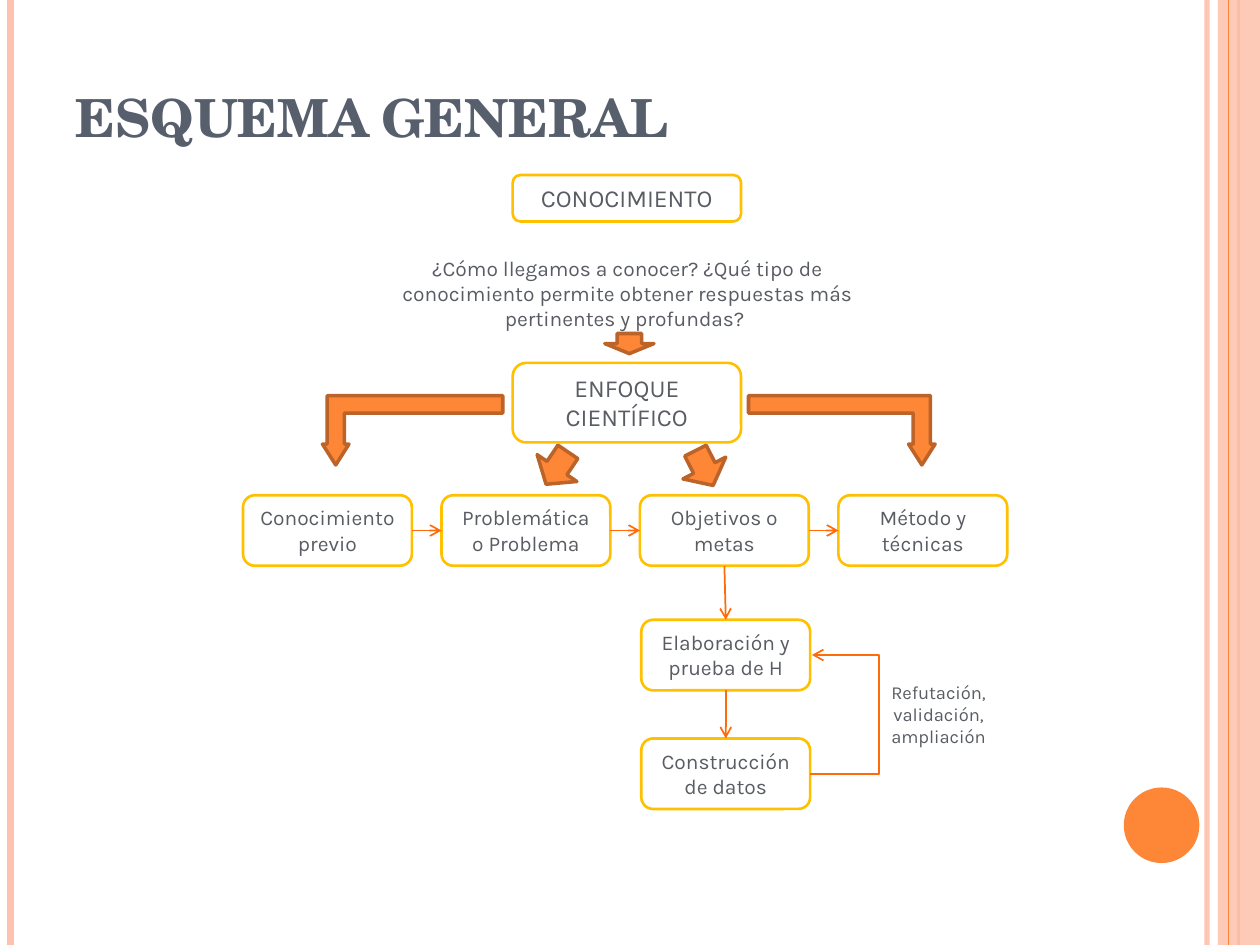
from pptx import Presentation
from pptx.dml.color import RGBColor
from pptx.enum.dml import MSO_LINE
from pptx.enum.shapes import MSO_CONNECTOR, MSO_SHAPE
from pptx.enum.text import MSO_ANCHOR, MSO_AUTO_SIZE, PP_ALIGN
from pptx.oxml.ns import qn
from pptx.util import Pt
from lxml.etree import SubElement

PAGE_WIDTH, PAGE_HEIGHT = 720, 540
ORANGE, DARK_ORANGE, ARROW_ORANGE = "FE8637", "BC6329", "FF6B0A"
PEACH, YELLOW = "FEC3AE", "FFC000"
TITLE_GREY, TEXT_GREY = "575F6D", "595D63"
BOX_WIDTH, BOX_HEIGHT = 96.5, 40.3
ROW_LEFT, ROW_TOP, ROW_STEP = 138.9, 283, 113.4
TOP, LEFT, BOTTOM, RIGHT = range(4)


def paint(color_format, color, alpha=None):
    """Set a hex colour, with an optional opacity in percent."""
    color_format.rgb = RGBColor.from_string(color)
    if alpha is not None:
        # The colour element is reached through the fill that owns it
        SubElement(color_format._xFill[0], qn("a:alpha")).set("val", str(alpha * 1000))


def add_shape(page, kind, left, top, width, height, fill=None, line=None, line_width=1.5, alpha=None):
    shape = page.shapes.add_shape(kind, Pt(left), Pt(top), Pt(width), Pt(height))
    shape.shadow.inherit = False
    if fill:
        shape.fill.solid()
        paint(shape.fill.fore_color, fill, alpha)
    else:
        shape.fill.background()
    if line:
        paint(shape.line.color, line)
        shape.line.width = Pt(line_width)
    else:
        shape.line.fill.background()
    return shape


def add_text_box(page, text, left, top, width=BOX_WIDTH, height=BOX_HEIGHT, size=12, line=YELLOW):
    box = add_shape(page, MSO_SHAPE.ROUNDED_RECTANGLE, left, top, width, height, line=line)
    frame = box.text_frame
    frame.text = text
    frame.word_wrap = True
    frame.auto_size = MSO_AUTO_SIZE.SHAPE_TO_FIT_TEXT
    frame.vertical_anchor = MSO_ANCHOR.TOP
    para = frame.paragraphs[0]
    para.alignment = PP_ALIGN.CENTER
    font = para.runs[0].font
    font.name, font.size = "Karla", Pt(size)
    paint(font.color, TEXT_GREY)
    return box


def add_block_arrow(page, kind, left, top, width, height, rotation=0, flipped=False):
    arrow = add_shape(page, kind, left, top, width, height, ORANGE, DARK_ORANGE, 2)
    arrow.rotation = rotation
    if flipped:
        arrow.element.spPr.find(qn("a:xfrm")).set("flipH", "1")
    return arrow


def add_line(page, start, end, color, width, kind=MSO_CONNECTOR.STRAIGHT, alpha=None):
    line = page.shapes.add_connector(kind, *map(Pt, start + end))
    line.line.width = Pt(width)
    line.line.dash_style = MSO_LINE.SOLID
    line.line.fill.solid()
    paint(line.line.fill.fore_color, color, alpha)
    SubElement(line.element.spPr, qn("a:effectLst"))
    return line


def add_arrowhead(line):
    SubElement(line.line._get_or_add_ln(), qn("a:tailEnd")).set("type", "arrow")


def join(page, first, first_side, second, second_side):
    line = add_line(page, (0, 0), (0, 0), ARROW_ORANGE, 1)
    line.begin_connect(first, first_side)
    line.end_connect(second, second_side)
    add_arrowhead(line)


def add_feedback_arrow(page, start, end, reach):
    """Draw an elbow that runs out by reach before it turns back to end."""
    line = add_line(page, start, end, ARROW_ORANGE, 1, MSO_CONNECTOR.ELBOW)
    guide = SubElement(line.element.spPr.find(qn("a:prstGeom")).get_or_add_avLst(), qn("a:gd"))
    guide.set("name", "adj1")
    guide.set("fmla", f"val {round(reach / (end[0] - start[0]) * 100000)}")
    add_arrowhead(line)


def add_decoration(page):
    def stripe(x, color, width, alpha=None):
        add_line(page, (x, 0), (x, PAGE_HEIGHT), color, width, alpha=alpha)

    stripe(689.8, PEACH, 3, 93)
    stripe(6, PEACH, 4.5)
    stripe(707.8, ORANGE, 1.5)
    add_shape(page, MSO_SHAPE.RECTANGLE, 696, 0, 24, PAGE_HEIGHT, PEACH, alpha=87)
    stripe(702, ORANGE, 0.75)
    add_shape(page, MSO_SHAPE.OVAL, 642.2, 450, 43.2, 43.2, ORANGE)


def set_title(page, text):
    title = page.shapes.title
    title.left, title.top, title.width, title.height = Pt(36), Pt(21.6), Pt(588), Pt(90)
    frame = title.text_frame
    frame.text = text
    frame.auto_size = MSO_AUTO_SIZE.NONE
    frame.vertical_anchor = MSO_ANCHOR.MIDDLE
    para = frame.paragraphs[0]
    para.alignment = PP_ALIGN.LEFT
    font = para.runs[0].font
    font.name, font.size, font.bold = "TeX Gyre Schola", Pt(30), True
    paint(font.color, TITLE_GREY)
    font._element.set("cap", "small")


def add_block_arrows(page):
    add_block_arrow(page, MSO_SHAPE.DOWN_ARROW, 345.6, 190.6, 28.1, 11.5)
    for left, width, flipped in ((184.3, 103, False), (427.7, 106.6, True)):
        arrow = add_block_arrow(page, MSO_SHAPE.BENT_UP_ARROW, left, 226.1, width, 39.6, 180, flipped)
        for index, value in enumerate((0.25, 0.191, 0.301)):
            arrow.adjustments[index] = value
    for left, rotation in ((304.6, 34), (388.8, 333.1)):
        add_block_arrow(page, MSO_SHAPE.DOWN_ARROW, left, 256.3, 27.4, 22.3, rotation)


def main():
    deck = Presentation()
    deck.slide_width, deck.slide_height = Pt(PAGE_WIDTH), Pt(PAGE_HEIGHT)
    page = deck.slides.add_slide(deck.slide_layouts[5])
    add_decoration(page)
    set_title(page, "ESQUEMA GENERAL")

    add_text_box(page, "CONOCIMIENTO", 293, 100, 130.5, 26.6, 14)
    add_text_box(page, "ENFOQUE CIENTÍFICO", 293, 207.4, 130.5, 45.4, 14)
    add_text_box(page, "¿Cómo llegamos a conocer? ¿Qué tipo de conocimiento permite "
                 "obtener respuestas más pertinentes y profundas? ",
                 219.6, 139.7, 277.9, 56.2, line=None)

    stages = ["Conocimiento previo", "Problemática o Problema", "Objetivos o metas", "Método y técnicas"]
    row = [add_text_box(page, text, ROW_LEFT + index * ROW_STEP, ROW_TOP)
           for index, text in enumerate(stages)]
    column_left, test_top, data_top = 366.5, 354.2, 422
    test = add_text_box(page, "Elaboración y prueba de H", column_left, test_top)
    data = add_text_box(page, "Construcción de datos", column_left, data_top)

    add_block_arrows(page)
    for first, second in zip(row, row[1:]):
        join(page, first, RIGHT, second, LEFT)
    goals = row[2]
    for first, second in ((goals, test), (test, data)):
        join(page, first, BOTTOM, second, TOP)

    column_right = column_left + BOX_WIDTH
    add_feedback_arrow(page, (column_right, data_top + BOX_HEIGHT / 2),
                       (column_right + 1, test_top + BOX_HEIGHT / 2), 39.5)
    add_text_box(page, "Refutación, validación, ampliación", 491, 383, 90.7, 52.6, 10.5, None)
    deck.save("out.pptx")


if __name__ == "__main__":
    main()
